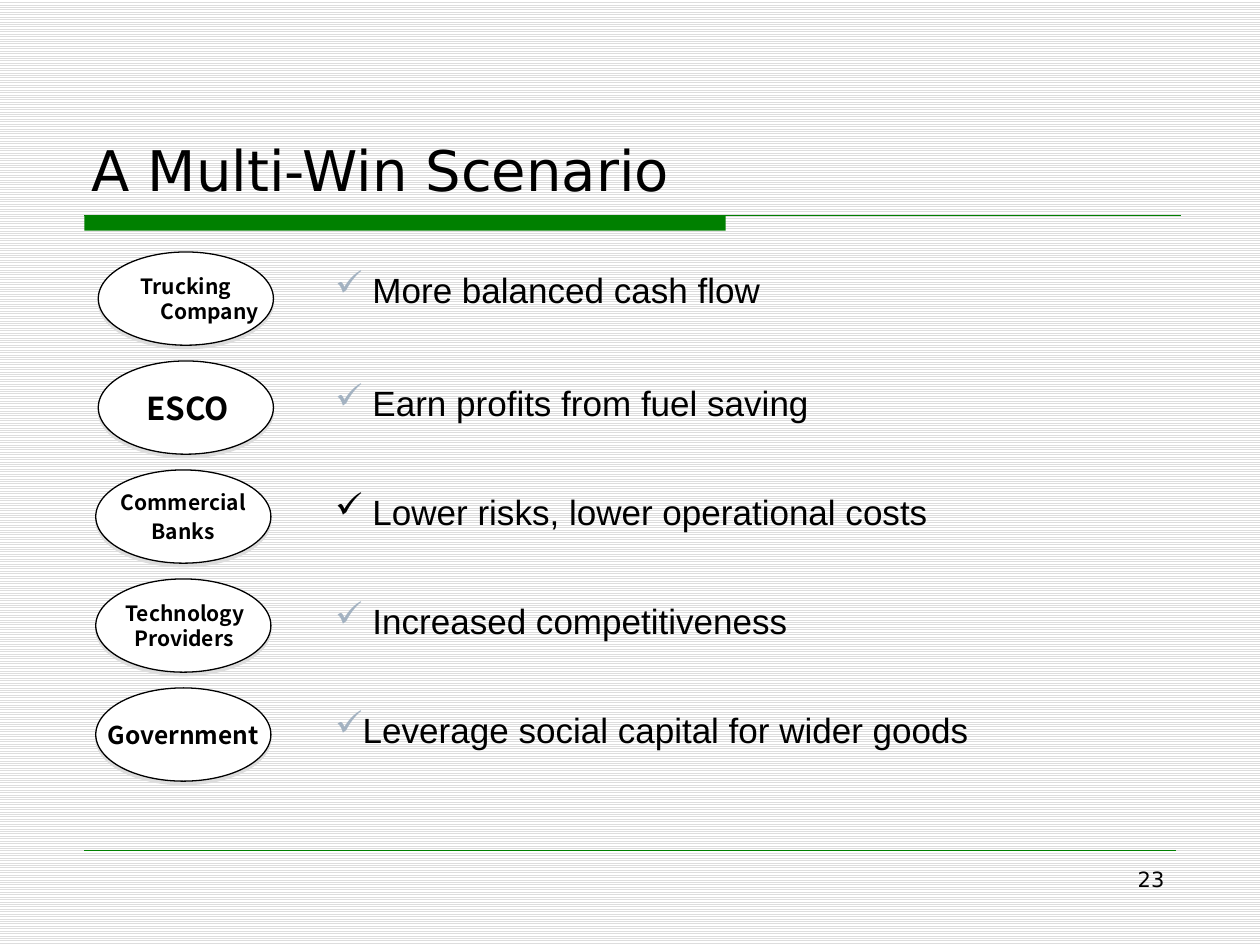
from lxml.etree import SubElement
from pptx import Presentation
from pptx.dml.color import RGBColor
from pptx.enum.dml import MSO_PATTERN
from pptx.enum.shapes import MSO_CONNECTOR, MSO_SHAPE
from pptx.enum.text import MSO_ANCHOR, PP_ALIGN
from pptx.oxml.ns import qn
from pptx.util import Inches, Pt

BLACK = RGBColor(0, 0, 0)
WHITE = RGBColor(255, 255, 255)
GREEN = RGBColor(0, 128, 0)
GREY = RGBColor(0xDD, 0xDD, 0xDD)
BLUE = RGBColor(0xA3, 0xB2, 0xC1)

HANG, FLAT = (0.38, -0.38), (0.01, 0.02)   # left margin, first-line indent
# party lines, size, indent, oval left, benefit, benefit drop, tick colour
ROWS = [
    (["Trucking Company"], 12, HANG, 0.78, " More balanced cash flow", 0.13, BLUE),
    (["ESCO"], 18, FLAT, 0.78, " Earn profits from fuel saving", 0.16, BLUE),
    (["Commercial", "Banks"], 12, HANG, 0.76,
     " Lower risks, lower operational costs", 0.16, BLACK),
    (["Technology Providers"], 12, FLAT, 0.76, " Increased competitiveness", 0.16, BLUE),
    (["Government"], 14, HANG, 0.76, "Leverage social capital for wider goods", 0.16, BLUE),
]
TOP, PITCH = 2.0, 0.865
OVAL_W, OVAL_H = 1.39, 0.74
PAD_X, PAD_Y = 0.06, 0.03


def write(home, box, lines, size, face, bold=False, gap=0, dent=None, pad=(0, 0),
          align=PP_ALIGN.LEFT, anchor=MSO_ANCHOR.TOP):
    """Add a text box and return its paragraphs."""
    frame = home.add_textbox(*map(Inches, box)).text_frame
    side, edge = map(Inches, pad)
    form = dict(word_wrap=True, vertical_anchor=anchor, margin_left=side,
                margin_right=side, margin_top=edge, margin_bottom=edge)
    for key, val in form.items():
        setattr(frame, key, val)
    frame.text = "\n".join(lines)
    for para in frame.paragraphs:
        para.alignment = align
        para.space_before = Pt(size * gap)
        if dent:
            props = para._p.get_or_add_pPr()
            for key, val in zip(("marL", "indent"), dent):
                props.set(key, str(Inches(val)))
        for key, val in dict(size=Pt(size), name=face, bold=bold).items():
            setattr(para.font, key, val)
            setattr(para.runs[0].font, key, val)
        para.runs[0].font.color.rgb = BLACK
    return frame.paragraphs


def tick(para, tint):
    props = para._p.get_or_add_pPr()
    SubElement(SubElement(props, qn("a:buClr")), qn("a:srgbClr"), val=str(tint))
    SubElement(props, qn("a:buChar"), char="✓")


def rule(home, left, right, y, width):
    line = home.add_connector(MSO_CONNECTOR.STRAIGHT,
                              *map(Inches, (left, y, right, y)))
    line.line.color.rgb = GREEN
    line.line.width = Pt(width)
    SubElement(line._element.spPr, qn("a:effectLst"))


def oval(home, box):
    shape = home.add_shape(MSO_SHAPE.OVAL, *map(Inches, box))
    shape.fill.solid()
    shape.fill.fore_color.rgb = WHITE
    shape.line.color.rgb = BLACK
    shape.line.width = Pt(0.75)
    shape.shadow.inherit = False
    glow = shape._element.spPr.find(qn("a:effectLst"))
    cast = SubElement(glow, qn("a:outerShdw"), dist=str(Pt(2)), dir="5400000",
                      algn="ctr", rotWithShape="0")
    SubElement(cast, qn("a:srgbClr"), val=str(GREY))


deck = Presentation()
deck.slide_width, deck.slide_height = Inches(10), Inches(7.5)
slide = deck.slides.add_slide(deck.slide_layouts[6])
parts = slide.shapes

# Striped background
back = slide.background.fill
back.patterned()
back.pattern = MSO_PATTERN.LIGHT_HORIZONTAL
back.fore_color.rgb, back.back_color.rgb = GREY, WHITE

# Title bar and rules
bar = parts.add_shape(MSO_SHAPE.RECTANGLE, *map(Inches, (0.67, 1.71, 5.09, 0.12)))
bar.fill.solid()
bar.fill.fore_color.rgb = GREEN
bar.line.fill.background()
bar.shadow.inherit = False
rule(parts, 0.67, 9.37, 1.71, 0.75)
rule(parts, 0.67, 9.33, 6.75, 0.25)

# Title and page number
write(parts, (0.63, 0.33, 8.75, 1.33), ["A Multi-Win Scenario"], 32, "DejaVu Sans",
      pad=(0.1, 0.05), anchor=MSO_ANCHOR.BOTTOM)
write(parts, (7.17, 6.83, 2.17, 0.52), ["23"], 12, "DejaVu Sans",
      pad=(0.1, 0.05), align=PP_ALIGN.RIGHT)

# One row per party: oval with its name, then the benefit
for row, (names, size, dent, left, gain, drop, tint) in enumerate(ROWS):
    y = TOP + row * PITCH
    group = parts.add_group_shape().shapes
    oval(group, (left, y, OVAL_W, OVAL_H))
    write(group, (left + PAD_X, y + PAD_Y, OVAL_W - 2 * PAD_X, OVAL_H - 2 * PAD_Y),
          names, size, "Noto Sans CJK SC", bold=True, gap=0.2, dent=dent,
          align=PP_ALIGN.CENTER, anchor=MSO_ANCHOR.MIDDLE)
    paras = write(parts, (2.65, y + drop, 6.45, 0.33), [gain], 20, "Arial",
                  gap=0.2, dent=(0.15, -0.14))
    tick(paras[0], tint)

deck.save("out.pptx")
